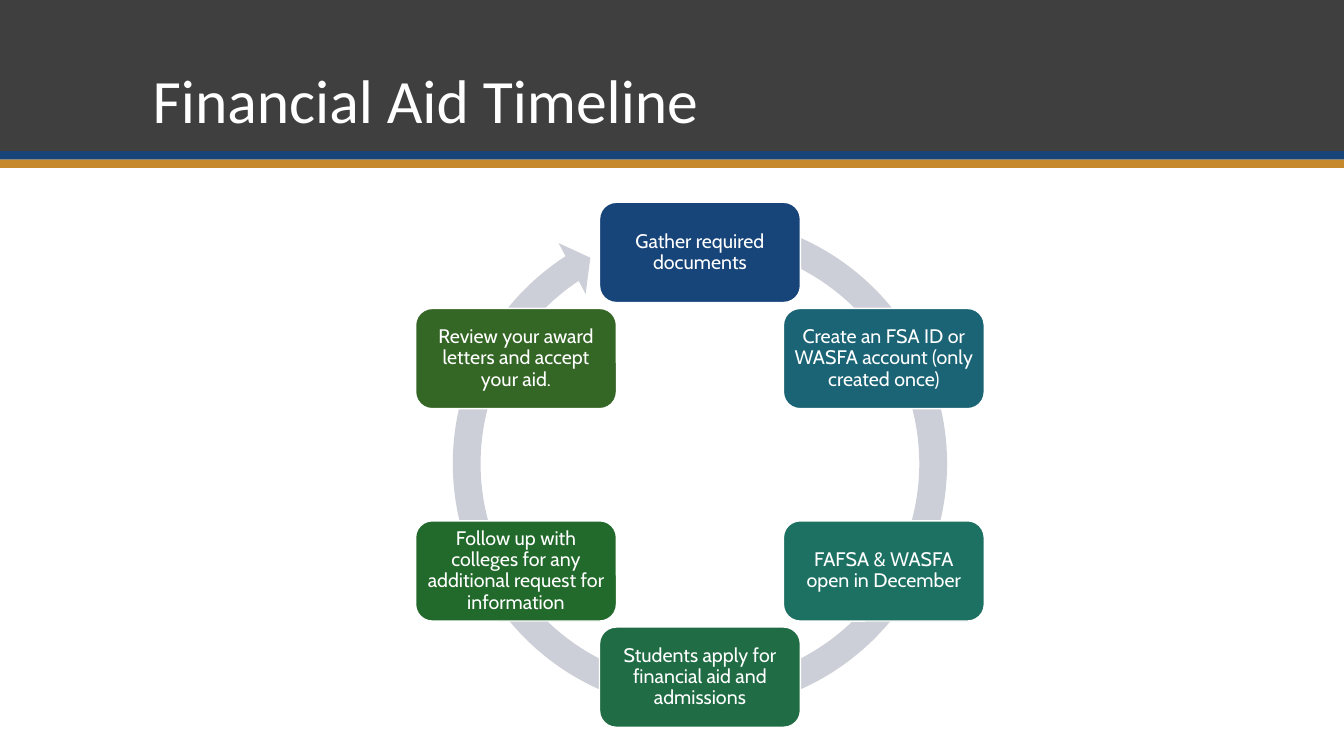
"""Build the Financial Aid Timeline slide."""
from dataclasses import dataclass
from math import cos, radians, sin

from pptx import Presentation
from pptx.dml.color import RGBColor
from pptx.enum.shapes import MSO_SHAPE as Preset
from pptx.enum.text import MSO_ANCHOR as Anchor, PP_ALIGN as Align
from pptx.shapes.autoshape import Shape
from pptx.slide import Slide
from pptx.text.text import TextFrame
from pptx.util import Pt


@dataclass(frozen=True)
class Theme:
    """Colours, fonts and type sizes of the slide."""
    white: str = "FFFFFF"
    header: str = "3F3F3F"
    blue: str = "174479"
    gold: str = "C6892B"
    ring: str = "CCCFD7"
    title_font: str = "Calibri"
    step_font: str = "Cabin"
    title_size: float = 44
    step_size: float = 14


@dataclass(frozen=True)
class Band:
    """A full-width stripe of the header."""
    top: float
    height: float
    color: str


@dataclass(frozen=True)
class Step:
    """One stage of the yearly cycle."""
    text: str
    color: str


THEME = Theme()
SLIDE_WIDTH, SLIDE_HEIGHT = 960, 540
RING_X, RING_Y, RING_SIZE = 500, 331.2, 374.4
RING_ADJUSTMENTS = (0.053, 3.126, 142.059, 171.401, 0.055)
STEP_X, STEP_Y, STEP_RADIUS = 500, 332, 151.7
STEP_WIDTH, STEP_HEIGHT, STEP_INSET = 143.5, 71.6, 4.2

BANDS = (
    Band(0, 108, THEME.header),
    Band(108, 6, THEME.blue),
    Band(114, 6, THEME.gold),
)
STEPS = (
    Step("Gather required documents", THEME.blue),
    Step("Create an FSA ID or WASFA account (only created once)", "1A6475"),
    Step("FAFSA & WASFA open in December", "1D7163"),
    Step("Students apply for financial aid and admissions", "206D45"),
    Step("Follow up with colleges for any additional request for information", "226A2B"),
    Step("Review your award letters and accept your aid.", "346625"),
)


def add_filled(slide: Slide, preset: Preset, left: float, top: float,
               width: float, height: float, color: str) -> Shape:
    """Add a flat preset shape without an outline."""
    shape = slide.shapes.add_shape(preset, Pt(left), Pt(top), Pt(width), Pt(height))
    shape.shadow.inherit = False
    shape.fill.solid()
    shape.fill.fore_color.rgb = RGBColor.from_string(color)
    shape.line.fill.background()
    return shape


def write(frame: TextFrame, text: str, font: str, size: float,
          align: Align, anchor: Anchor) -> None:
    """Set one wrapped white paragraph in a text frame."""
    frame.word_wrap = True
    frame.vertical_anchor = anchor
    paragraph = frame.paragraphs[0]
    paragraph.text = text
    paragraph.alignment = align
    paragraph.line_spacing = 0.9
    paragraph.font.name = font
    paragraph.font.size = Pt(size)
    paragraph.font.color.rgb = RGBColor.from_string(THEME.white)


def add_header(slide: Slide) -> None:
    """Draw the header bands and the title."""
    for band in BANDS:
        add_filled(slide, Preset.RECTANGLE, 0, band.top, SLIDE_WIDTH, band.height, band.color)
    title = slide.shapes.add_textbox(Pt(102), Pt(20), Pt(756), Pt(81.5))
    write(title.text_frame, "Financial Aid Timeline", THEME.title_font,
          THEME.title_size, Align.LEFT, Anchor.BOTTOM)


def add_ring(slide: Slide) -> None:
    """Draw the circular arrow behind the steps."""
    ring = add_filled(slide, Preset.CIRCULAR_ARROW, RING_X - RING_SIZE / 2,
                      RING_Y - RING_SIZE / 2, RING_SIZE, RING_SIZE, THEME.ring)
    for index, value in enumerate(RING_ADJUSTMENTS):
        ring.adjustments[index] = value


def add_step(slide: Slide, step: Step, angle: float) -> None:
    """Draw a step at a clockwise angle from the top of the cycle."""
    left = STEP_X + STEP_RADIUS * sin(angle) - STEP_WIDTH / 2
    top = STEP_Y - STEP_RADIUS * cos(angle) - STEP_HEIGHT / 2
    box = add_filled(slide, Preset.ROUNDED_RECTANGLE, left, top,
                     STEP_WIDTH, STEP_HEIGHT, step.color)
    box.line.color.rgb = RGBColor.from_string(THEME.white)
    box.line.width = Pt(1)
    frame = box.text_frame
    frame.margin_left = frame.margin_right = Pt(STEP_INSET)
    frame.margin_top = frame.margin_bottom = Pt(STEP_INSET)
    write(frame, step.text, THEME.step_font, THEME.step_size, Align.CENTER, Anchor.MIDDLE)


def main() -> None:
    """Assemble and save the slide."""
    deck = Presentation()
    deck.slide_width, deck.slide_height = Pt(SLIDE_WIDTH), Pt(SLIDE_HEIGHT)
    slide = deck.slides.add_slide(deck.slide_layouts[6])
    add_header(slide)
    add_ring(slide)
    for index, step in enumerate(STEPS):
        add_step(slide, step, radians(index * 360 / len(STEPS)))
    deck.save("out.pptx")


if __name__ == "__main__":
    main()
